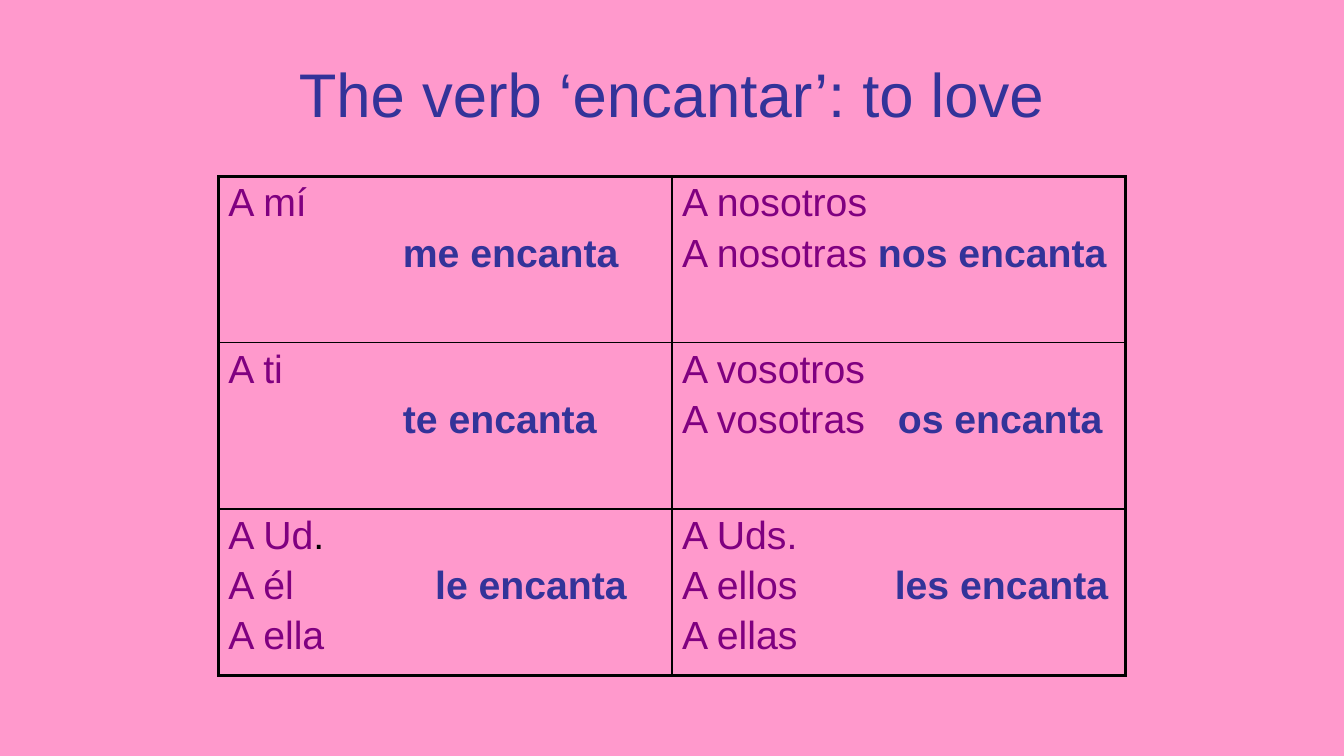
import pptx
import pptx.dml.color
import pptx.enum.text
import pptx.oxml.ns
import pptx.util
from lxml import etree

PINK, NAVY, PURPLE, BLACK = "FF99CC", "333399", "800080", "000000"

# Each cell: lines of (text, tab stop in inches or None), one run per format.
# A line holds the person, an optional verb form and the verb's tab position.
CONJUGATIONS = [
    [[("A mí",), ("", "me encanta", 1.73)],
     [("A nosotros",), ("A nosotras ", "nos encanta", None)]],
    [[("A ti",), ("", "te encanta", 1.73)],
     [("A vosotros",), ("A vosotras", "os encanta", 2.14)]],
    [[("A Ud.",), ("A él", "le encanta", 2.05), ("A ella",)],
     [("A Uds.",), ("A ellos", "les encanta", 2.11), ("A ellas",)]],
]


def rgb(value):
    return pptx.dml.color.RGBColor.from_string(value)


def add_run(p, text, size=28, color=PURPLE, bold=False, font="Arial"):
    r = p.add_run()
    r.text = text
    r.font.name, r.font.size, r.font.bold = font, pptx.util.Pt(size), bold
    r.font.color.rgb = rgb(color)
    return r


def add_element(parent, tag, **attributes):
    return etree.SubElement(parent, pptx.oxml.ns.qn(tag), attributes)


class VerbSlide:
    """Title-only slide on a grid of 80 columns and 150 rows."""

    COLUMNS, ROWS = 80, 150
    OUTER, INNER = 2.25, 1

    def __init__(self, prs, background):
        self.prs = prs
        self.s = prs.slides.add_slide(prs.slide_layouts[5])
        self.s.background.fill.solid()
        self.s.background.fill.fore_color.rgb = rgb(background)

    def box(self, column, row, columns, rows):
        x = self.prs.slide_width / self.COLUMNS
        y = self.prs.slide_height / self.ROWS
        return [round(v) for v in (column * x, row * y, columns * x, rows * y)]

    def title(self, text, *place):
        sp = self.s.shapes.title
        sp.left, sp.top, sp.width, sp.height = self.box(*place)
        tf = sp.text_frame
        tf.word_wrap = True
        tf.vertical_anchor = pptx.enum.text.MSO_ANCHOR.MIDDLE
        p = tf.paragraphs[0]
        p.alignment = pptx.enum.text.PP_ALIGN.CENTER
        add_run(p, text, size=44, color=NAVY)

    def table(self, cells, *place):
        rows, columns = len(cells), len(cells[0])
        table = self.s.shapes.add_table(rows, columns, *self.box(*place)).table
        table.first_row = table.horz_banding = False
        for i, row in enumerate(cells):
            for j, lines in enumerate(row):
                cell = table.cell(i, j)
                self.borders(cell, L=j == 0, R=j == columns - 1,
                             T=i == 0, B=i == rows - 1)
                cell.fill.background()
                self.cell_text(cell.text_frame, lines)

    def borders(self, cell, **is_outer):
        tc_pr = cell._tc.get_or_add_tcPr()
        for side, outer in is_outer.items():
            width = pptx.util.Pt(self.OUTER if outer else self.INNER)
            ln = add_element(tc_pr, f"a:ln{side}", w=str(int(width)))
            add_element(add_element(ln, "a:solidFill"), "a:srgbClr", val=BLACK)

    def cell_text(self, tf, lines):
        for n, (person, *verb) in enumerate(lines):
            p = tf.add_paragraph() if n else tf.paragraphs[0]
            p.space_before = pptx.util.Pt(4.6)
            if person == "A Ud.":
                add_run(p, "A Ud")
                add_run(p, ".", color=BLACK)
            elif person:
                add_run(p, person)
            if verb:
                form, tab = verb
                if tab:
                    self.tab_stop(p, tab)
                    form = "\t" + form
                add_run(p, form, color=NAVY, bold=True)

    def tab_stop(self, p, inches):
        tabs = add_element(p._p.get_or_add_pPr(), "a:tabLst")
        add_element(tabs, "a:tab", pos=str(int(pptx.util.Inches(inches))), algn="l")


def main():
    prs = pptx.Presentation()
    prs.slide_width = pptx.util.Inches(13.33)
    prs.slide_height = pptx.util.Inches(7.5)
    slide = VerbSlide(prs, PINK)
    slide.title("The verb ‘encantar’: to love", 4, 6, 72, 25)
    slide.table(CONJUGATIONS, 13, 35, 54, 99)
    prs.save("out.pptx")


if __name__ == "__main__":
    main()
